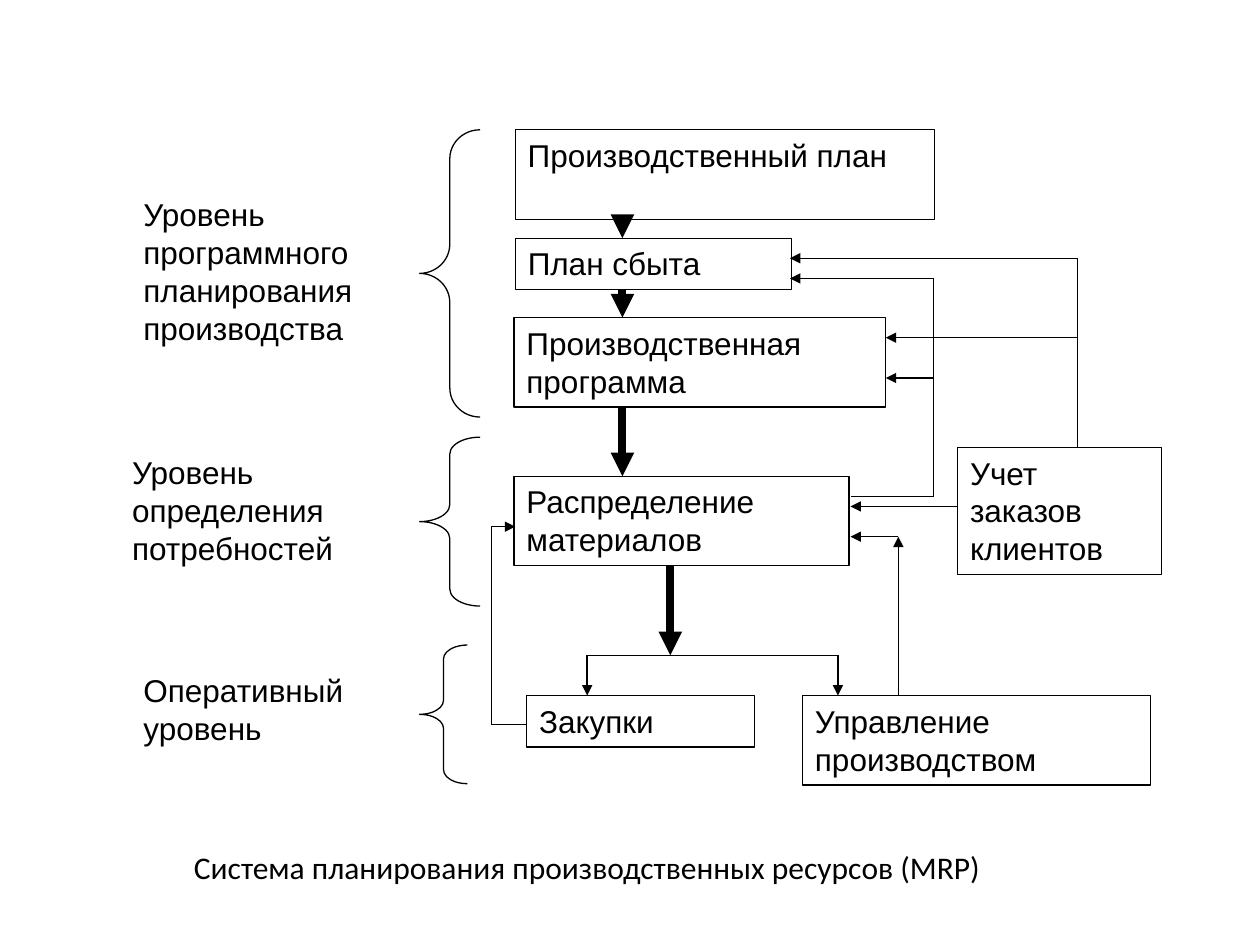
from itertools import pairwise

from lxml.etree import SubElement
from pptx import Presentation
from pptx.dml.color import RGBColor
from pptx.enum.shapes import MSO_CONNECTOR, MSO_SHAPE
from pptx.enum.text import MSO_ANCHOR, PP_ALIGN
from pptx.oxml.ns import qn
from pptx.util import Inches, Pt

BLACK = "000000"
THIN, THICK = 0.75, 4.5

CAPTION = "Система планирования производственных ресурсов (MRP)"

# text, left, top, width, height
STAGES = [
    ("Производственный план", 4.09, 1.03, 3.33, 0.71),
    ("План сбыта", 4.09, 1.89, 2.19, 0.41),
    ("Производственная программа", 4.08, 2.52, 2.95, 0.71),
    ("Распределение материалов", 4.08, 3.78, 2.66, 0.71),
    ("Учет заказов клиентов", 7.6, 3.55, 1.62, 1.01),
    ("Закупки", 4.18, 5.52, 1.81, 0.41),
    ("Управление производством", 6.37, 5.52, 2.76, 0.71),
]
LEVELS = [
    ("Уровень программного планирования производства", 1.04, 1.5, 2.57, 1.3),
    ("Уровень определения потребностей", 0.95, 3.55, 2.38, 1),
    ("Оперативный уровень", 1.04, 5.28, 2.28, 0.7),
]
# left, top, width, height, curl
BRACES = [
    (3.33, 1.03, 0.48, 2.28, 0.48),
    (3.33, 3.47, 0.48, 1.34, 0.28),
    (3.33, 5.12, 0.38, 1.1, 0.29),
]
# corner points of each route; the arrowhead is at the last one
ROUTES = [
    (THIN, [(4.18, 5.75), (3.9, 5.75), (3.9, 4.18), (4.09, 4.18)]),
    (THIN, [(5.32, 5.2), (4.66, 5.2), (4.66, 5.52)]),
    (THIN, [(5.32, 5.2), (6.65, 5.2), (6.65, 5.52)]),
    (THICK, [(5.32, 4.49), (5.32, 5.2)]),
    (THIN, [(7.6, 4.02), (6.75, 4.02)]),
    (THIN, [(7.13, 5.52), (7.13, 4.26)]),
    (THIN, [(7.13, 4.26), (6.75, 4.26)]),
    (THIN, [(8.55, 3.55), (8.55, 2.05), (6.27, 2.05)]),
    (THIN, [(6.75, 3.94), (7.41, 3.94), (7.41, 2.21), (6.27, 2.21)]),
    (THIN, [(8.55, 2.68), (7.03, 2.68)]),
    (THIN, [(7.41, 3), (7.03, 3)]),
    (THICK, [(4.94, 1.74), (4.94, 1.89)]),
    (THICK, [(4.94, 2.29), (4.94, 2.52)]),
    (THICK, [(4.94, 3.23), (4.94, 3.78)]),
]


def color(hex_value):
    return RGBColor.from_string(hex_value)


def write(shape, text, font, align, anchor):
    frame = shape.text_frame
    frame.word_wrap = True
    frame.vertical_anchor = anchor
    paragraph = frame.paragraphs[0]
    paragraph.alignment = align
    run = paragraph.add_run()
    run.text = text
    run.font.name = font
    run.font.size = Pt(18)
    run.font.color.rgb = color(BLACK)


def set_line(line, width):
    line.color.rgb = color(BLACK)
    line.width = Pt(width)


def add_outline(slide, preset, box):
    shape = slide.shapes.add_shape(preset, *map(Inches, box))
    shape.shadow.inherit = False
    shape.fill.background()
    set_line(shape.line, THIN)
    return shape


def add_route(slide, width, points):
    """Draw straight segments through the points, with an arrowhead on the last."""
    for start, end in pairwise(points):
        segment = slide.shapes.add_connector(
            MSO_CONNECTOR.STRAIGHT, *map(Inches, start + end))
        set_line(segment.line, width)
        properties = segment.element.spPr
        if end == points[-1]:
            SubElement(properties.find(qn("a:ln")), qn("a:tailEnd"), type="triangle")
        SubElement(properties, qn("a:effectLst"))


def main():
    deck = Presentation()
    deck.slide_width, deck.slide_height = Inches(10), Inches(7.5)
    slide = deck.slides.add_slide(deck.slide_layouts[5])

    caption = slide.shapes.title
    caption.left, caption.top = Inches(1.16), Inches(6.51)
    caption.width, caption.height = Inches(7), Inches(0.74)
    write(caption, CAPTION, "Calibri", PP_ALIGN.CENTER, MSO_ANCHOR.MIDDLE)

    for text, *box in STAGES:
        stage = add_outline(slide, MSO_SHAPE.RECTANGLE, box)
        write(stage, text, "Arial", PP_ALIGN.LEFT, MSO_ANCHOR.TOP)
    for text, *box in LEVELS:
        level = slide.shapes.add_textbox(*map(Inches, box))
        write(level, text, "Arial", PP_ALIGN.LEFT, MSO_ANCHOR.TOP)
    for width, points in ROUTES:
        add_route(slide, width, points)
    for *box, curl in BRACES:
        brace = add_outline(slide, MSO_SHAPE.LEFT_BRACE, box)
        brace.adjustments[0] = curl

    deck.save("out.pptx")


if __name__ == "__main__":
    main()
